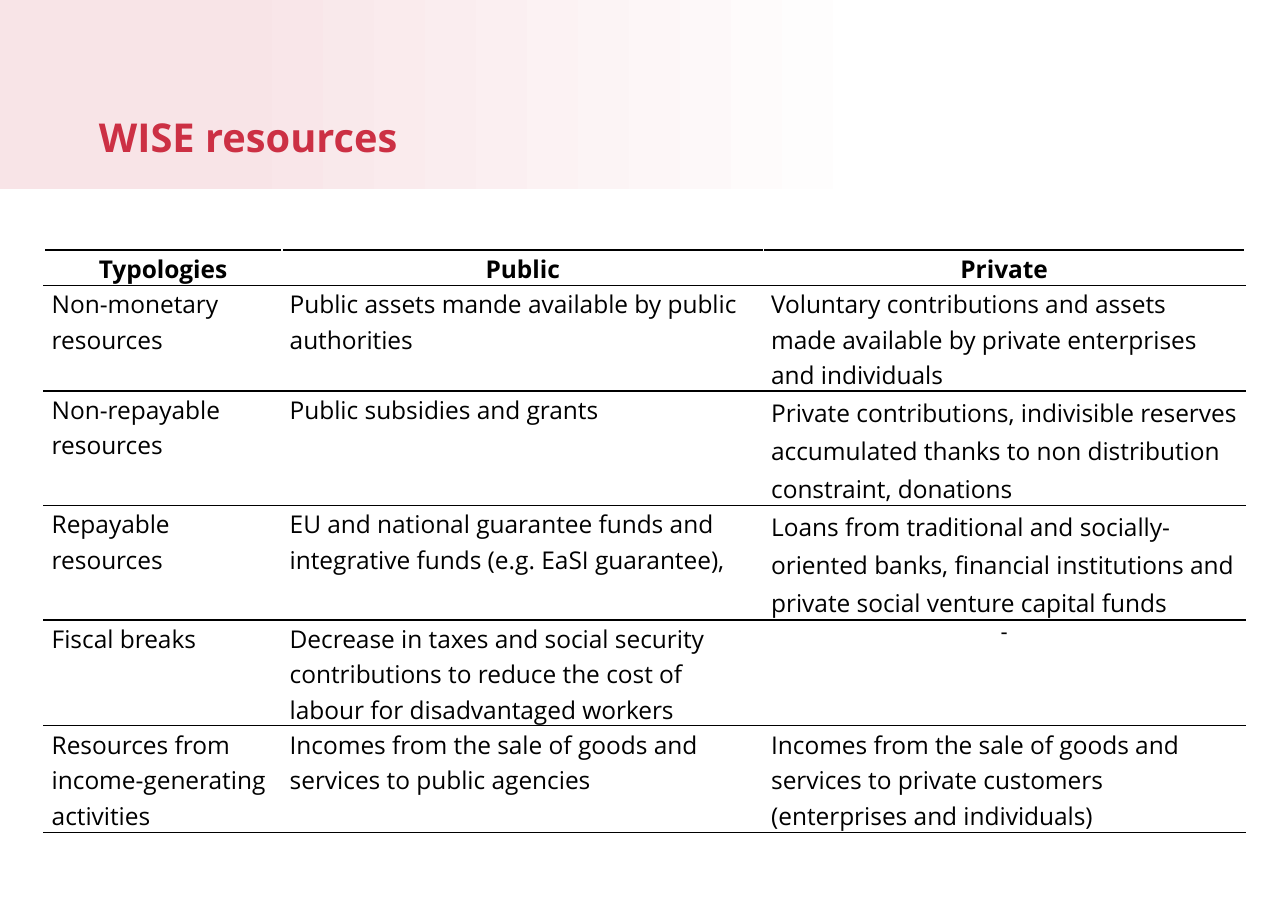
import copy
from dataclasses import dataclass

import pptx
import pptx.dml.color
import pptx.enum.shapes
import pptx.enum.text
import pptx.oxml
import pptx.oxml.ns
import pptx.util

Inches = pptx.util.Inches
ALIGN = pptx.enum.text.PP_ALIGN
COLOURS = {"white": "FFFFFF", "pink": "F8E4E7", "blush": "F9E4E7",
           "red": "CC3044", "black": "000000"}
BANNER_STOPS = [(0, "white"), (0.75, "pink"), (1, "blush")]
BORDERS = {"lnL": "white", "lnR": "white", "lnT": "black", "lnB": "black"}
CELL_FORMAT = {"margin_left": Inches(0.07), "margin_right": Inches(0.07),
               "margin_top": 0, "margin_bottom": 0}
TITLE_FORMAT = {"word_wrap": True, "vertical_anchor": pptx.enum.text.MSO_ANCHOR.BOTTOM}
COLUMN_WIDTHS = [2.16, 4.37, 4.37]
ROW_HEIGHTS = [0.32, 0.96, 1.04, 1.04, 0.96, 0.97]


@dataclass(frozen=True)
class TextStyle:
    size: int = 16
    font: str = "Open Sans"
    colour: str = "black"
    bold: bool = False
    align: ALIGN = ALIGN.LEFT
    spacing: float = 1.07


BODY = TextStyle()
LOOSE = TextStyle(spacing=1.15)
HEADER = TextStyle(bold=True, align=ALIGN.CENTER)
DASH = TextStyle(size=14, font="Arial", align=ALIGN.CENTER, spacing=1.0)
TITLE = TextStyle(size=26, colour="red", bold=True, spacing=0.9)


@dataclass(frozen=True)
class Resource:
    typology: str
    public: str
    private: str
    style: TextStyle = BODY
    private_style: TextStyle = BODY


RESOURCES = [
    Resource("Typologies", "Public", "Private", HEADER, HEADER),
    Resource("Non-monetary resources",
             "Public assets mande available by public authorities",
             "Voluntary contributions and assets made available by private "
             "enterprises and individuals"),
    Resource("Non-repayable resources",
             "Public subsidies and grants",
             "Private contributions, indivisible reserves accumulated thanks to "
             "non distribution constraint, donations", private_style=LOOSE),
    Resource("Repayable resources",
             "EU and national guarantee funds and integrative funds "
             "(e.g. EaSI guarantee),",
             "Loans from traditional and socially-oriented banks, financial "
             "institutions and private social venture capital funds",
             private_style=LOOSE),
    Resource("Fiscal breaks",
             "Decrease in taxes and social security contributions to reduce the "
             "cost of labour for disadvantaged workers",
             "-", private_style=DASH),
    Resource("Resources from income-generating activities",
             "Incomes from the sale of goods and services to public agencies",
             "Incomes from the sale of goods and services to private customers "
             "(enterprises and individuals)"),
]


def rgb(name: str) -> pptx.dml.color.RGBColor:
    return pptx.dml.color.RGBColor.from_string(COLOURS[name])


def apply_format(target: object, values: dict) -> None:
    for name, value in values.items():
        setattr(target, name, value)


def write_text(frame: pptx.text.text.TextFrame, text: str, style: TextStyle) -> None:
    para = frame.paragraphs[0]
    apply_format(para, {"alignment": style.align, "line_spacing": style.spacing})
    span = para.add_run()
    span.text = text
    apply_format(span.font, {"size": pptx.util.Pt(style.size), "name": style.font,
                             "bold": style.bold})
    span.font.color.rgb = rgb(style.colour)


def add_banner(page: pptx.slide.Slide) -> None:
    banner = page.shapes.add_shape(pptx.enum.shapes.MSO_SHAPE.RECTANGLE,
                                   0, 0, Inches(8.02), Inches(1.72))
    banner.shadow.inherit = False
    banner.line.fill.background()
    banner.fill.gradient()
    banner.fill.gradient_angle = 180
    stop_list = banner._element.spPr.find(".//" + pptx.oxml.ns.qn("a:gsLst"))
    stop_list.append(copy.deepcopy(stop_list[-1]))
    for stop, (position, colour) in zip(banner.fill.gradient_stops, BANNER_STOPS):
        stop.position = position
        stop.color.rgb = rgb(colour)


def add_title(page: pptx.slide.Slide) -> None:
    box = page.shapes.add_textbox(Inches(0.8), 0, Inches(9.56), Inches(1.51))
    apply_format(box.text_frame, TITLE_FORMAT)
    write_text(box.text_frame, "WISE resources", TITLE)


def format_cell(cell: pptx.table._Cell) -> None:
    """Set margins, one-point borders and a white fill, in schema order."""
    apply_format(cell, CELL_FORMAT)
    for side, colour in BORDERS.items():
        cell._tc.get_or_add_tcPr().append(pptx.oxml.parse_xml(
            f'<a:{side} {pptx.oxml.ns.nsdecls("a")} w="12700"><a:solidFill>'
            f'<a:srgbClr val="{COLOURS[colour]}"/></a:solidFill></a:{side}>'))
    cell.fill.solid()
    cell.fill.fore_color.rgb = rgb("white")


def add_resource_table(page: pptx.slide.Slide) -> None:
    table = page.shapes.add_table(
        len(RESOURCES), len(COLUMN_WIDTHS), Inches(0.4), Inches(2.27),
        Inches(sum(COLUMN_WIDTHS)), Inches(sum(ROW_HEIGHTS))).table
    apply_format(table, {"first_row": False, "horz_banding": False})
    for column, width in zip(table.columns, COLUMN_WIDTHS):
        column.width = Inches(width)
    for row, height, resource in zip(table.rows, ROW_HEIGHTS, RESOURCES):
        row.height = Inches(height)
        texts = [(resource.typology, resource.style),
                 (resource.public, resource.style),
                 (resource.private, resource.private_style)]
        for cell, (text, style) in zip(row.cells, texts):
            format_cell(cell)
            write_text(cell.text_frame, text, style)


def main() -> None:
    deck = pptx.Presentation()
    apply_format(deck, {"slide_width": Inches(11.69), "slide_height": Inches(8.27)})
    page = deck.slides.add_slide(deck.slide_layouts[6])
    add_banner(page)
    add_title(page)
    add_resource_table(page)
    deck.save("out.pptx")


if __name__ == "__main__":
    main()
